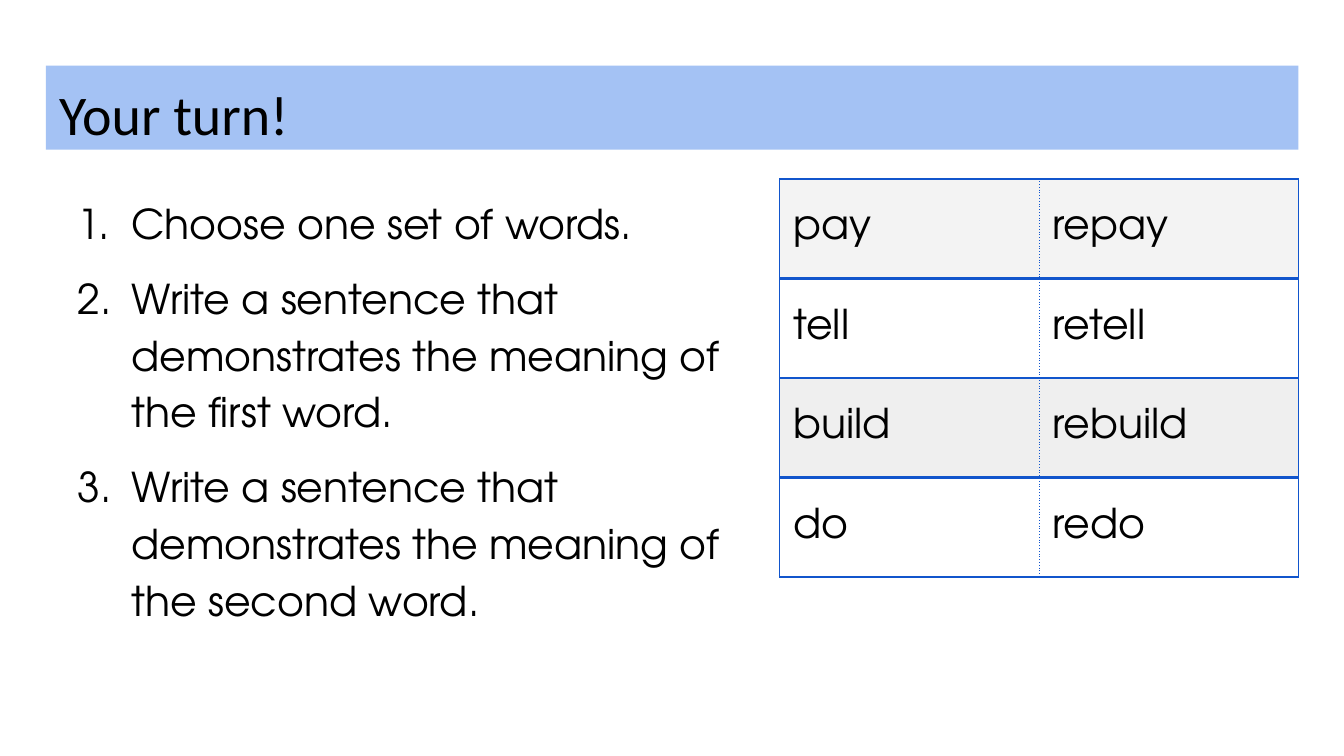
from lxml import etree
from pptx import Presentation
from pptx.dml.color import RGBColor
from pptx.enum.shapes import MSO_SHAPE as Shape
from pptx.enum.text import MSO_ANCHOR as Anchor, PP_ALIGN as Align
from pptx.oxml.ns import qn
from pptx.util import Pt

TITLE = "Your turn!"
STEPS = [
    "Choose one set of words.",
    "Write a sentence that demonstrates the meaning of the first word.",
    "Write a sentence that demonstrates the meaning of the second word.",
]
WORD_PAIRS = [("pay", "repay"), ("tell", "retell"), ("build", "rebuild"), ("do", "redo")]
ROW_FILLS = ["F3F3F3", "FFFFFF", "EFEFEF", "FFFFFF"]
BANNER, BORDER, INK = "A4C2F4", "1155CC", "000000"
TITLE_FONT, BODY_FONT = "Calibri", "TeX Gyre Adventor"
INSET, COLUMN_WIDTH, ROW_HEIGHT = 7.2, 139, 53.3


def color(value):
    return RGBColor.from_string(value)


def style(paragraph, name, size):
    for span in paragraph.runs:
        span.font.name, span.font.size = name, Pt(size)
        span.font.color.rgb = color(INK)


def set_insets(target):
    target.margin_left = target.margin_right = Pt(INSET)
    target.margin_top = target.margin_bottom = Pt(INSET)


def number(paragraph):
    properties = paragraph._p.get_or_add_pPr()
    properties.set("marL", str(Pt(36)))
    properties.set("indent", str(Pt(-28.8)))
    tint = etree.SubElement(properties, qn("a:buClr"))
    etree.SubElement(tint, qn("a:srgbClr"), val=INK)
    etree.SubElement(properties, qn("a:buFont"), typeface=BODY_FONT)
    etree.SubElement(properties, qn("a:buAutoNum"), type="arabicPeriod")


def add_border(cell, side, width, dash):
    line = etree.SubElement(cell._tc.get_or_add_tcPr(), qn(f"a:ln{side}"), w=str(Pt(width)))
    fill = etree.SubElement(line, qn("a:solidFill"))
    etree.SubElement(fill, qn("a:srgbClr"), val=BORDER)
    etree.SubElement(line, qn("a:prstDash"), val=dash)


def add_banner(page):
    box = page.shapes.add_shape(Shape.RECTANGLE, Pt(24.6), Pt(35.2), Pt(671), Pt(45))
    box.shadow.inherit = False
    box.fill.solid()
    box.fill.fore_color.rgb = color(BANNER)
    box.line.fill.background()
    frame = box.text_frame
    set_insets(frame)
    frame.word_wrap = True
    frame.vertical_anchor = Anchor.TOP
    frame.text = TITLE
    frame.paragraphs[0].alignment = Align.LEFT
    style(frame.paragraphs[0], TITLE_FONT, 30)


def add_steps(page):
    frame = page.shapes.add_textbox(Pt(27.4), Pt(95), Pt(376.6), Pt(243.4)).text_frame
    set_insets(frame)
    frame.word_wrap = True
    frame.text = "\n".join(STEPS)
    for index, para in enumerate(frame.paragraphs):
        number(para)
        para.line_spacing = 1.15
        para.space_before = Pt(10 if index else 0)
        style(para, BODY_FONT, 22)


def add_words(page):
    rows, columns = len(WORD_PAIRS), len(WORD_PAIRS[0])
    table = page.shapes.add_table(rows, columns, Pt(417.8), Pt(95.9),
                                  Pt(columns * COLUMN_WIDTH), Pt(rows * ROW_HEIGHT)).table
    table.first_row = table.horz_banding = False
    for column in table.columns:
        column.width = Pt(COLUMN_WIDTH)
    for row, pair in enumerate(WORD_PAIRS):
        table.rows[row].height = Pt(ROW_HEIGHT)
        for col, word in enumerate(pair):
            cell = table.cell(row, col)
            cell.text = word
            style(cell.text_frame.paragraphs[0], BODY_FONT, 22)
            set_insets(cell)
            cell.vertical_anchor = Anchor.MIDDLE
            add_border(cell, "L", 0.75, "sysDot" if col else "solid")
            add_border(cell, "R", 0.75, "sysDot" if col < columns - 1 else "solid")
            add_border(cell, "T", 1.5 if row else 0.75, "solid")
            add_border(cell, "B", 1.5 if row < rows - 1 else 0.75, "solid")
            cell.fill.solid()
            cell.fill.fore_color.rgb = color(ROW_FILLS[row])


def main():
    """Build the word-pair exercise slide."""
    deck = Presentation()
    deck.slide_width, deck.slide_height = Pt(720), Pt(405)
    page = deck.slides.add_slide(deck.slide_layouts[6])
    add_banner(page)
    add_steps(page)
    add_words(page)
    deck.save("out.pptx")


if __name__ == "__main__":
    main()
